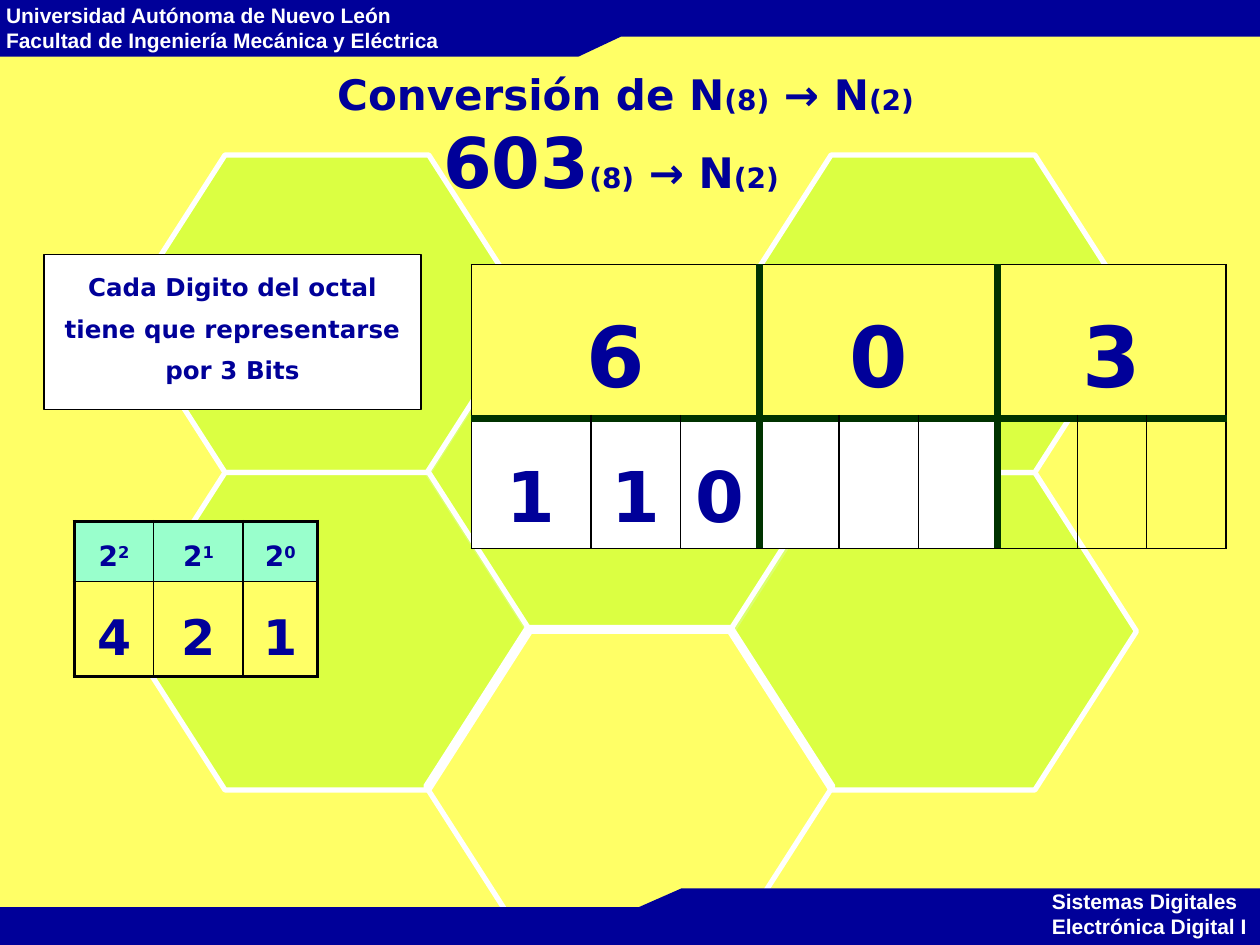
import pptx
import pptx.util
import pptx.dml.color
import pptx.enum.shapes
import pptx.enum.text
import pptx.oxml.ns
import lxml.etree

Inches, Pt = pptx.util.Inches, pptx.util.Pt
Shape = pptx.enum.shapes.MSO_SHAPE
Align = pptx.enum.text.PP_ALIGN
Anchor = pptx.enum.text.MSO_ANCHOR
qn = pptx.oxml.ns.qn
NAVY, YELLOW, WHITE, BLACK = "000099", "FFFF66", "FFFFFF", "000000"
LIME, MINT, GREEN = "CCFF33", "99FFCC", "003300"
CENTER = Align.CENTER


def rgb(code):
    return pptx.dml.color.RGBColor.from_string(code)


def paint(item, code):
    """Fill a shape or cell; None leaves it clear."""
    if code is None:
        item.fill.background()
    else:
        item.fill.solid()
        item.fill.fore_color.rgb = rgb(code)


def style(shape, fill, line=None, width=1):
    shape.shadow.inherit = False
    paint(shape, fill)
    if line is None:
        shape.line.fill.background()
    else:
        shape.line.color.rgb = rgb(line)
        shape.line.width = Pt(width)


def add_run(para, text, size, color=NAVY, face="DejaVu Sans", raised=False):
    run = para.add_run()
    run.text = text
    run.font.size, run.font.bold, run.font.name = Pt(size), True, face
    run.font.color.rgb = rgb(color)
    if raised:
        run._r.get_or_add_rPr().set("baseline", "30000")


def loosen(para, size):
    """Centre a body paragraph with its wide line spacing."""
    para.alignment = CENTER
    para.line_spacing = 1.4
    para.space_before = Pt(size * 0.2)


def add_box(slide, kind, left, top, width, height, *look):
    shape = slide.shapes.add_shape(
        kind, Inches(left), Inches(top), Inches(width), Inches(height))
    style(shape, *look)
    return shape


def add_hex(slide, left, top, fill):
    shape = add_box(slide, Shape.HEXAGON, left, top, 3.23, 2.52, fill, WHITE, 3)
    shape.adjustments[0] = 0.32
    if fill:
        color = shape.fill._xPr.find(qn("a:solidFill"))[0]
        lxml.etree.SubElement(color, qn("a:alpha"), val="70000")


def add_band(slide, points):
    spots = [(Inches(x), Inches(y)) for x, y in points]
    form = slide.shapes.build_freeform(*spots[0])
    form.add_line_segments(spots[1:], close=True)
    style(form.convert_to_shape(), NAVY)


def add_label(slide, left, top, width, lines):
    box = slide.shapes.add_textbox(
        Inches(left), Inches(top), Inches(width), Inches(0.5))
    frame = box.text_frame
    frame.word_wrap = False
    for i, line in enumerate(lines):
        para = frame.add_paragraph() if i else frame.paragraphs[0]
        add_run(para, line, 12, WHITE, "Arial")


def add_title(slide):
    box = slide.shapes.add_textbox(
        Inches(1.46), Inches(0.76), Inches(7.01), Inches(0.63))
    frame = box.text_frame
    frame.word_wrap = True
    frame.vertical_anchor = Anchor.MIDDLE
    tail = [("(8)", 16), (" → N", 24), ("(2)", 16)]
    first, second = frame.paragraphs[0], frame.add_paragraph()
    for para, head in ((first, ("Conversión de N", 24)), (second, ("603", 40))):
        para.alignment = CENTER
        for text, size in [head] + tail:
            add_run(para, text, size)
    second._p.get_or_add_pPr().set("marR", str(Inches(0.23)))


def add_note(slide):
    box = add_box(slide, Shape.RECTANGLE, 0.35, 2.02, 2.99, 1.23, WHITE, BLACK)
    frame = box.text_frame
    frame.word_wrap = True
    frame.vertical_anchor = Anchor.TOP
    para = frame.paragraphs[0]
    loosen(para, 14)
    add_run(para, "Cada Digito del octal tiene que representarse por 3 Bits", 14)


def add_edge(cell, side, color, width):
    line = lxml.etree.SubElement(
        cell._tc.get_or_add_tcPr(), qn("a:ln" + side), w=str(Pt(width)))
    fill = lxml.etree.SubElement(line, qn("a:solidFill"))
    lxml.etree.SubElement(fill, qn("a:srgbClr"), val=color)


def fill_cell(cell, edges, fill, size, parts):
    """Edges run left, right, top, bottom; a second part is raised."""
    for side, edge in zip("LRTB", edges):
        add_edge(cell, side, *edge)
    paint(cell, fill)
    if parts:
        para = cell.text_frame.paragraphs[0]
        loosen(para, size)
        for i, part in enumerate(parts):
            add_run(para, part, size, raised=i > 0)


def add_grid(slide, left, top, cols, rows):
    frame = slide.shapes.add_table(
        len(rows), len(cols), Inches(left), Inches(top),
        Inches(sum(cols)), Inches(sum(rows)))
    table = frame.table
    table.first_row = table.horz_banding = False
    for col, width in zip(table.columns, cols):
        col.width = Inches(width)
    for row, height in zip(table.rows, rows):
        row.height = Inches(height)
    return table


def add_octal(slide):
    cols = [0.95, 0.71] + [0.63] * 5 + [0.55, 0.63]
    table = add_grid(slide, 3.74, 2.1, cols, [1.22, 1.03])
    thin, thick = (BLACK, 1), (GREEN, 4.5)

    def upright(col):
        return thick if col in (3, 6) else thin

    for col, digit in zip((0, 3, 6), "603"):
        cell = table.cell(0, col)
        cell.merge(table.cell(0, col + 2))
        edges = upright(col), upright(col + 3), thin, thick
        fill_cell(cell, edges, YELLOW, 48, digit)
    for col in range(9):
        edges = upright(col), upright(col + 1), thick, thin
        fill_cell(table.cell(1, col), edges, WHITE if col < 6 else None,
                  40, "110"[col:col + 1])


def add_powers(slide):
    table = add_grid(slide, 0.59, 4.14, [0.63, 0.71, 0.59], [0.47, 0.75])
    thin, thick = (BLACK, 1), (BLACK, 2.25)
    rows = [(MINT, 16, ["22", "21", "20"]), (YELLOW, 28, "421")]
    for r, (fill, size, texts) in enumerate(rows):
        for c, text in enumerate(texts):
            edges = [thick if outer else thin
                     for outer in (c == 0, c == 2, r == 0, r == 1)]
            fill_cell(table.cell(r, c), edges, fill, size, text)


def add_frame(slide):
    """Background, honeycomb and the two bands with their labels."""
    add_box(slide, Shape.RECTANGLE, 0, 0, 10, 7.5, YELLOW)
    add_band(slide, [(-0.01, 0.45), (-0.02, -0.03), (10, -0.02),
                     (10, 0.29), (4.93, 0.29), (4.59, 0.45)])
    add_label(slide, -0.05, -0.03, 3.64, [
        "Universidad Autónoma de Nuevo León",
        "Facultad de Ingeniería Mecánica y Eléctrica"])
    for left, top in ((0.98, 1.23), (3.39, 2.49), (5.79, 3.75),
                      (5.79, 1.23), (0.98, 3.75)):
        add_hex(slide, left, top, LIME)
    add_hex(slide, 3.38, 4.98, None)
    add_band(slide, [(10.01, 7.05), (10.02, 7.53), (0, 7.52),
                     (0, 7.2), (5.07, 7.2), (5.41, 7.05)])
    add_label(slide, 8.25, 7, 1.75,
              ["Sistemas Digitales", "Electrónica Digital I"])


def main():
    deck = pptx.Presentation()
    deck.slide_width, deck.slide_height = Inches(10), Inches(7.5)
    slide = deck.slides.add_slide(deck.slide_layouts[6])
    add_frame(slide)
    add_title(slide)
    add_note(slide)
    add_octal(slide)
    add_powers(slide)
    deck.save("out.pptx")


if __name__ == "__main__":
    main()
